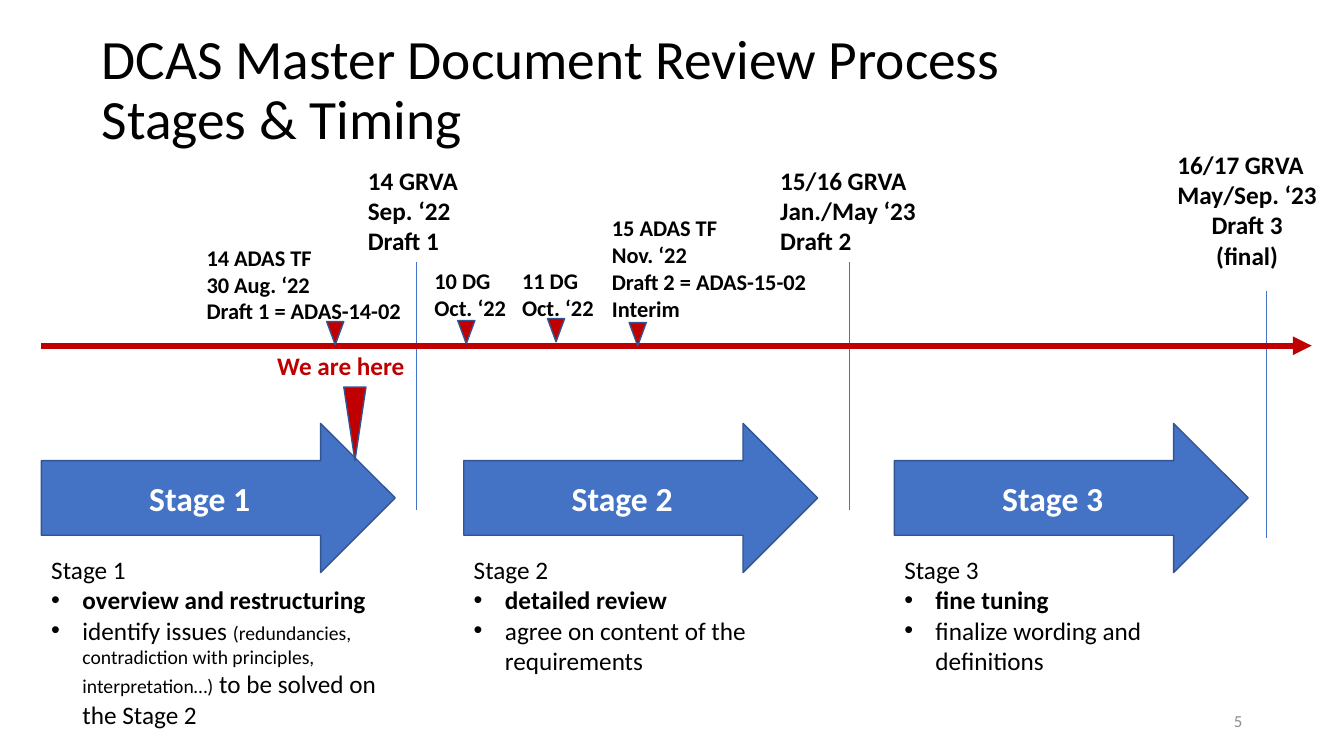
from dataclasses import dataclass

from lxml import etree
from pptx import Presentation
from pptx.dml.color import RGBColor
from pptx.enum.shapes import MSO_CONNECTOR, MSO_SHAPE
from pptx.enum.text import MSO_ANCHOR, MSO_AUTO_SIZE, PP_ALIGN
from pptx.oxml.ns import qn
from pptx.util import Emu, Pt

EMU_PER_PX = 9144
FONT = "Calibri"
BLACK = RGBColor(0x00, 0x00, 0x00)
WHITE = RGBColor(0xFF, 0xFF, 0xFF)
GRAY = RGBColor(0x8C, 0x8C, 0x8C)
BLUE = RGBColor(0x44, 0x72, 0xC4)
NAVY = RGBColor(0x32, 0x54, 0x91)
RED = RGBColor(0xC0, 0x00, 0x00)
STRAIGHT = MSO_CONNECTOR.STRAIGHT
RIGHT_ARROW = MSO_SHAPE.RIGHT_ARROW
TRIANGLE = MSO_SHAPE.ISOSCELES_TRIANGLE
MIDDLE = MSO_ANCHOR.MIDDLE
FIT_SHAPE = MSO_AUTO_SIZE.SHAPE_TO_FIT_TEXT
NO_FIT = MSO_AUTO_SIZE.NONE
LEFT, CENTER, RIGHT = PP_ALIGN.LEFT, PP_ALIGN.CENTER, PP_ALIGN.RIGHT

TIMELINE_Y = 343
STAGE_WIDTH = 351
BULLET_INDENT = 31


@dataclass(frozen=True)
class Box:
    left: int
    top: int
    width: int
    height: int


@dataclass(frozen=True)
class Run:
    text: str
    size: int = 18


@dataclass(frozen=True)
class Stage:
    name: str
    left: int
    text_height: int
    focus: str
    details: list[Run]


@dataclass(frozen=True)
class Label:
    box: Box
    lines: list[str]
    size: int
    wrap: bool
    color: RGBColor = BLACK
    centered_from: int = 99


@dataclass(frozen=True)
class Line:
    start: tuple[int, int]
    end: tuple[int, int]
    color: RGBColor
    width: float
    arrow: bool = False


STAGES = [
    Stage("Stage 1", 41, 192, "overview and restructuring", [
        Run("identify issues "),
        Run("(redundancies, contradiction with principles, interpretation…)", 14),
        Run(" to be solved on the Stage 2"),
    ]),
    Stage("Stage 2", 460, 131, "detailed review", [Run("agree on content of the requirements")]),
    Stage("Stage 3", 887, 131, "fine tuning", [Run("finalize wording and definitions")]),
]
LABELS = [
    Label(Box(355, 159, 116, 101), ["14 GRVA", "Sep. ‘22", "Draft 1"], 18, False),
    Label(Box(764, 159, 156, 101), ["15/16 GRVA", "Jan./May ‘23", "Draft 2"], 18, False),
    Label(Box(1158, 143, 160, 131), ["16/17 GRVA", "May/Sep. ‘23", "Draft 3", "(final)"], 18, False,
          centered_from=2),
    Label(Box(265, 343, 148, 40), ["We are here"], 18, False, RED),
    Label(Box(195, 237, 218, 91), ["14 ADAS TF", "30 Aug. ‘22", "Draft 1 = ADAS-14-02"], 16, True),
    Label(Box(421, 260, 93, 64), ["10 DG", "Oct. ‘22"], 16, True),
    Label(Box(508, 260, 93, 64), ["11 DG", "Oct. ‘22"], 16, True),
    Label(Box(597, 208, 218, 118),
          ["15 ADAS TF", "Nov. ‘22", "Draft 2 = ADAS-15-02", "Interim"], 16, True),
]
LINES = [
    Line((413, 260), (413, 506), BLUE, 0.5),
    Line((842, 260), (842, 506), BLUE, 0.5),
    Line((1256, 289), (1256, 534), BLUE, 0.5),
    Line((41, TIMELINE_Y), (1301, TIMELINE_Y), RED, 4.5, arrow=True),
]
MARKERS = [
    Box(341, 384, 22, 73),
    Box(324, 319, 17, 23),
    Box(454, 318, 17, 23),
    Box(543, 316, 17, 23),
    Box(624, 320, 17, 23),
]


def px(value: int) -> Emu:
    return Emu(value * EMU_PER_PX)


def place(box: Box) -> tuple[Emu, Emu, Emu, Emu]:
    return px(box.left), px(box.top), px(box.width), px(box.height)


def style_font(font, size: float, color: RGBColor, bold: bool = False) -> None:
    font.name = FONT
    font.size = Pt(size)
    font.bold = bold
    font.color.rgb = color


def add_text_box(slide, box: Box, wrap: bool = True):
    frame = slide.shapes.add_textbox(*place(box)).text_frame
    frame.word_wrap = wrap
    frame.auto_size = FIT_SHAPE
    return frame


def add_block(slide, kind, box: Box, fill: RGBColor):
    shape = slide.shapes.add_shape(kind, *place(box))
    shape.shadow.inherit = False
    shape.fill.solid()
    shape.fill.fore_color.rgb = fill
    shape.line.color.rgb = NAVY
    shape.line.width = Pt(1)
    return shape


def add_bullet(paragraph) -> None:
    properties = paragraph._p.get_or_add_pPr()
    properties.set("marL", str(px(BULLET_INDENT)))
    properties.set("indent", str(-px(BULLET_INDENT)))
    bullet_font = etree.Element(qn("a:buFont"), typeface="Arial")
    bullet = etree.Element(qn("a:buChar"), char="•")
    properties.insert(0, bullet_font)
    properties.insert(1, bullet)


def add_title(slide) -> None:
    title = slide.shapes.title
    title.left, title.top, title.width, title.height = place(Box(91, 38, 1177, 105))
    frame = title.text_frame
    frame.text = "DCAS Master Document Review Process \vStages & Timing"
    frame.word_wrap = True
    frame.auto_size = NO_FIT
    frame.vertical_anchor = MIDDLE
    paragraph = frame.paragraphs[0]
    paragraph.alignment = LEFT
    paragraph.line_spacing = 0.9
    style_font(paragraph.font, 39.6, BLACK)


def add_slide_number(slide) -> None:
    frame = add_text_box(slide, Box(942, 695, 300, 40))
    frame.auto_size = NO_FIT
    frame.vertical_anchor = MIDDLE
    paragraph = frame.paragraphs[0]
    paragraph.text = "5"
    paragraph.alignment = RIGHT
    style_font(paragraph.font, 12, GRAY)


def add_stage(slide, stage: Stage) -> None:
    arrow = add_block(slide, RIGHT_ARROW, Box(stage.left, 420, STAGE_WIDTH, 148), BLUE)
    arrow.text_frame.vertical_anchor = MIDDLE
    caption = arrow.text_frame.paragraphs[0]
    caption.text = stage.name
    caption.alignment = CENTER
    style_font(caption.font, 24, WHITE, bold=True)

    frame = add_text_box(slide, Box(stage.left, 545, STAGE_WIDTH, stage.text_height))
    heading, focus, details = frame.paragraphs[0], frame.add_paragraph(), frame.add_paragraph()
    heading.text = stage.name
    focus.text = stage.focus
    for part in stage.details:
        run = details.add_run()
        run.text = part.text
        run.font.size = Pt(part.size)
    for paragraph in (heading, focus, details):
        style_font(paragraph.font, 18, BLACK, bold=paragraph is focus)
    add_bullet(focus)
    add_bullet(details)


def add_label(slide, label: Label) -> None:
    frame = add_text_box(slide, label.box, label.wrap)
    frame.text = "\n".join(label.lines)
    for index, paragraph in enumerate(frame.paragraphs):
        paragraph.alignment = CENTER if index >= label.centered_from else LEFT
        style_font(paragraph.font, label.size, label.color, bold=True)


def add_line(slide, line: Line) -> None:
    connector = slide.shapes.add_connector(STRAIGHT, *map(px, line.start + line.end))
    connector.line.color.rgb = line.color
    connector.line.width = Pt(line.width)
    if line.arrow:
        etree.SubElement(connector.line._get_or_add_ln(), qn("a:tailEnd"), type="triangle")
    etree.SubElement(connector._element.spPr, qn("a:effectLst"))


def main() -> None:
    presentation = Presentation()
    presentation.slide_width, presentation.slide_height = px(1333), px(750)
    slide = presentation.slides.add_slide(presentation.slide_layouts.get_by_name("Title Only"))
    add_title(slide)
    add_slide_number(slide)
    for stage in STAGES:
        add_stage(slide, stage)
    for label in LABELS:
        add_label(slide, label)
    for line in LINES:
        add_line(slide, line)
    for marker in MARKERS:
        add_block(slide, TRIANGLE, marker, RED).rotation = 180
    presentation.save("out.pptx")


if __name__ == "__main__":
    main()
